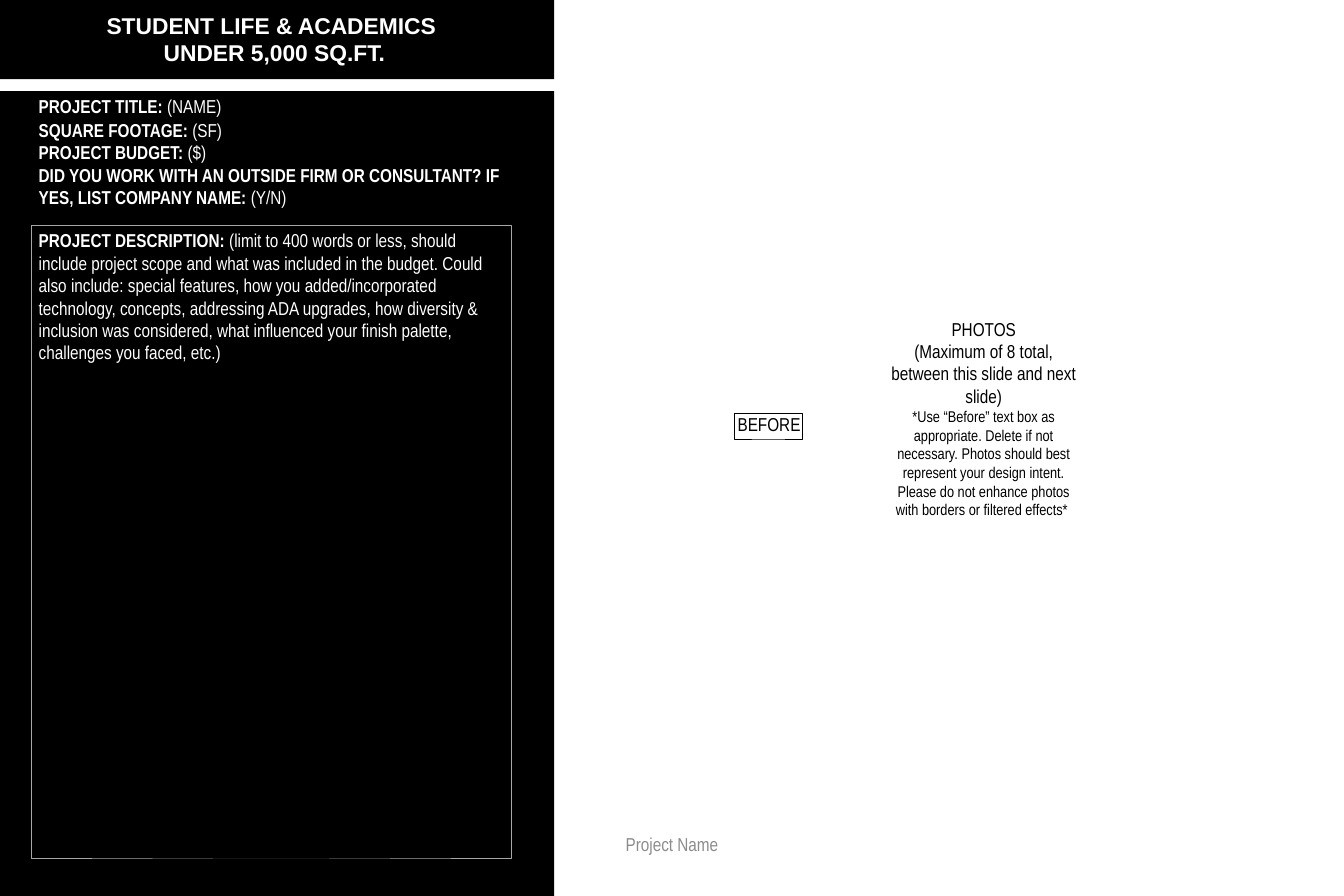
from dataclasses import dataclass

from pptx import Presentation
from pptx import util as u
from pptx.dml.color import RGBColor
from pptx.enum import shapes, text

EMU_PER_PX = 9144


@dataclass(frozen=True)
class Theme:
    black: str = "000000"
    white: str = "FFFFFF"
    grey: str = "8C8C8C"
    frame: str = "A6A6A6"
    heading_font: str = "Arial"
    body_font: str = "Arial Narrow"
    heading: int = 22
    body: int = 18
    note: int = 15
    hairline: float = 0.25
    outline: float = 0.75


class SlideBuilder:
    def __init__(self, slide, theme):
        self.slide = slide
        self.theme = theme

    def px(self, *lengths):
        return [u.Emu(length * EMU_PER_PX) for length in lengths]

    def rectangle(self, bounds, fill=None, line=None, width=0):
        box = self.slide.shapes.add_shape(shapes.MSO_SHAPE.RECTANGLE, *self.px(*bounds))
        box.shadow.inherit = False
        if fill:
            box.fill.solid()
            box.fill.fore_color.rgb = RGBColor.from_string(fill)
        else:
            box.fill.background()
        if line:
            box.line.color.rgb = RGBColor.from_string(line)
            box.line.width = u.Pt(width)
        else:
            box.line.fill.background()
        return box

    def textbox(self, bounds):
        return self.slide.shapes.add_textbox(*self.px(*bounds))

    def style(self, span, color, font=None, size=None, bold=False):
        span.font.name = font or self.theme.body_font
        span.font.size = u.Pt(size or self.theme.body)
        span.font.bold = bold
        span.font.color.rgb = RGBColor.from_string(color)

    def label(self, box, paragraphs, color, font=None, size=None, bold=False,
              centered=False, middle=False, insets=(10, 5, 10, 5)):
        frame = box.text_frame
        frame.word_wrap = True
        frame.vertical_anchor = text.MSO_ANCHOR.MIDDLE if middle else text.MSO_ANCHOR.TOP
        (frame.margin_left, frame.margin_top,
         frame.margin_right, frame.margin_bottom) = self.px(*insets)
        frame.text = "\n".join(paragraphs)
        for para in frame.paragraphs:
            para.alignment = text.PP_ALIGN.CENTER if centered else text.PP_ALIGN.LEFT
            for span in para.runs:
                self.style(span, color, font, size, bold)
        return frame

    def fields(self, box, entries):
        frame = self.label(box, [name + " " for name, _ in entries],
                           self.theme.white, bold=True)
        for para, (_, value) in zip(frame.paragraphs, entries):
            span = para.add_run()
            span.text = value
            self.style(span, self.theme.white)


def main():
    theme = Theme()
    deck = Presentation()
    deck.slide_width = u.Inches(18)
    deck.slide_height = u.Inches(12)
    page = SlideBuilder(deck.slides.add_slide(deck.slide_layouts[6]), theme)

    page.rectangle((0, 0, 742, 106), fill=theme.black)
    page.rectangle((0, 122, 742, 1078), fill=theme.black)

    page.label(page.textbox((612, 1116, 576, 60)), ["Project Name"], theme.grey,
               centered=True, insets=(0, 0, 0, 0))
    before = page.rectangle((983, 553, 92, 35), line=theme.black, width=theme.outline)
    page.label(before, ["BEFORE"], theme.black, centered=True, insets=(2, 0, 0, 0))

    photos = page.label(page.textbox((1183, 425, 267, 292)), [
        "PHOTOS",
        "(Maximum of 8 total, between this slide and next slide)",
        "*Use “Before” text box as appropriate. Delete if not necessary. "
        "Photos should best represent your design intent. "
        "Please do not enhance photos with borders or filtered effects* ",
    ], theme.black, centered=True, insets=(2, 0, 0, 0))
    photos.paragraphs[-1].runs[0].font.size = u.Pt(theme.note)

    page.label(page.textbox((25, 10, 685, 84)),
               ["STUDENT LIFE & ACADEMICS ", "UNDER 5,000 SQ.FT."],
               theme.white, theme.heading_font, theme.heading,
               bold=True, centered=True, middle=True)

    page.fields(page.textbox((42, 122, 642, 71)), [("PROJECT TITLE:", "(NAME)")])
    page.fields(page.textbox((42, 154, 642, 131)), [
        ("SQUARE FOOTAGE:", "(SF)"),
        ("PROJECT BUDGET:", "($)"),
        ("DID YOU WORK WITH AN OUTSIDE FIRM OR CONSULTANT? "
         "IF YES, LIST COMPANY NAME:", "(Y/N)"),
    ])
    description = page.rectangle((42, 302, 642, 847), line=theme.frame, width=theme.hairline)
    page.fields(description, [
        ("PROJECT DESCRIPTION:",
         "(limit to 400 words or less, should include project scope and what was "
         "included in the budget. Could also include: special features, how you "
         "added/incorporated technology, concepts, addressing ADA upgrades, how "
         "diversity & inclusion was considered, what influenced your finish palette, "
         "challenges you faced, etc.)"),
    ])

    deck.save("out.pptx")


if __name__ == "__main__":
    main()
